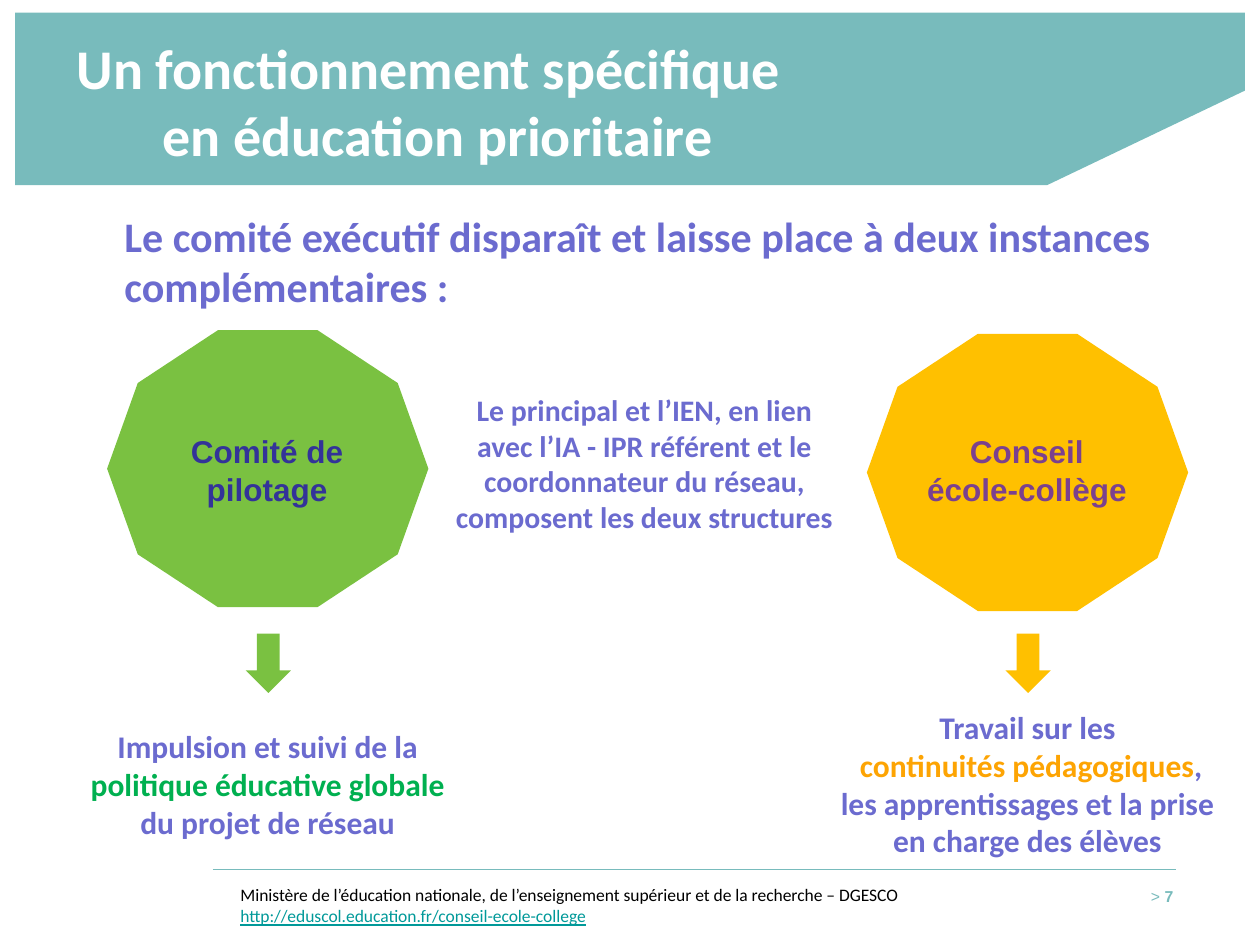
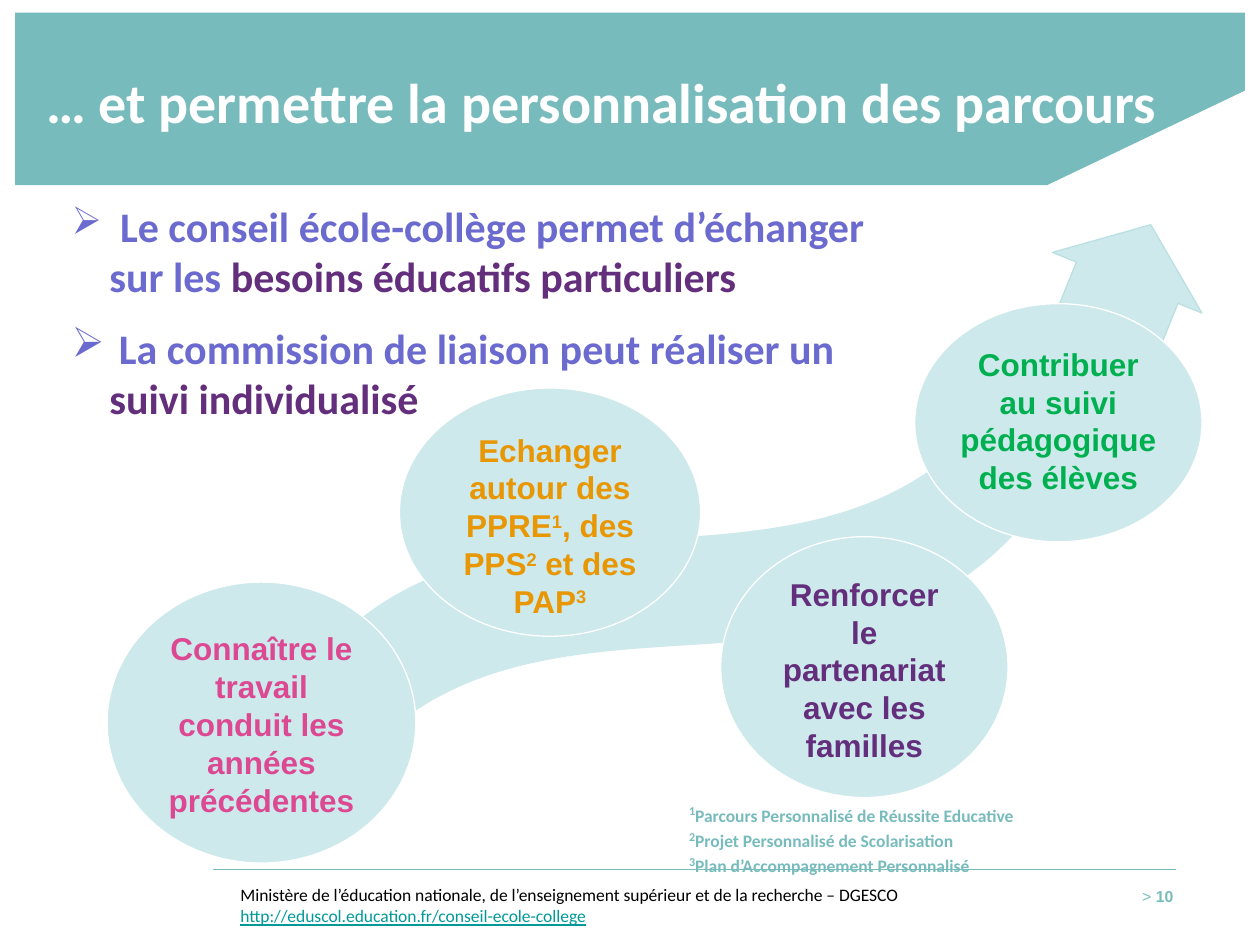
from lxml import etree
from pptx import Presentation
from pptx.dml.color import RGBColor
from pptx.enum.shapes import MSO_CONNECTOR, MSO_SHAPE
from pptx.enum.text import MSO_ANCHOR, PP_ALIGN
from pptx.oxml.ns import qn
from pptx.util import Inches, Pt

LEFT, CENTER, RIGHT = PP_ALIGN.LEFT, PP_ALIGN.CENTER, PP_ALIGN.RIGHT
TOP, MIDDLE = MSO_ANCHOR.TOP, MSO_ANCHOR.MIDDLE
DECAGON, DOWN_ARROW, ELLIPSE = MSO_SHAPE.DECAGON, MSO_SHAPE.DOWN_ARROW, MSO_SHAPE.OVAL
WAVE, RIGHT_ARROW = MSO_SHAPE.WAVE, MSO_SHAPE.RIGHT_ARROW
STRAIGHT = MSO_CONNECTOR.STRAIGHT

COLORS = {
    "teal": "78BBBC", "white": "FFFFFF", "black": "000000", "link": "009999",
    "lavender": "6B6BCF", "purple": "632E7C", "plum": "7B418E", "navy": "333399",
    "lime": "7AC141", "amber": "FFC000", "green": "00B050", "orange": "FDA403",
    "ochre": "E89602", "pink": "DC4892", "pale": "CDE9EB", "pale_edge": "BBE0E3",
}

BAND = [(9.88, 0.1), (0.12, 0.1), (0.12, 1.47), (8.31, 1.47), (9.88, 0.72)]
FOOTER = [
    "Ministère de l’éducation nationale, de l’enseignement supérieur et de la recherche – DGESCO",
    [("http://eduscol.education.fr/conseil-ecole-college", {"color": "link", "underline": True})],
]

BODIES = {
    "intro": "Le comité exécutif disparaît et laisse place à deux instances complémentaires :",
    "members": "Le principal et l’IEN, en lien avec l’IA - IPR référent et le coordonnateur du réseau, "
               "composent les deux structures",
}
INSTANCES = [
    {"left": 0.85, "top": 2.62, "fill": "lime", "color": "navy",
     "name": ["Comité de pilotage"], "role_box": (0.43, 5.72, 3.39, 1.01),
     "role": ["Impulsion et suivi de la ",
              ("politique éducative globale\n", {"color": "green"}),
              "du projet de réseau"]},
    {"left": 6.88, "top": 2.65, "fill": "amber", "color": "plum",
     "name": ["Conseil", "école-collège"], "role_box": (6.5, 5.57, 3.31, 1.31),
     "role": ["Travail sur les\n ",
              ("continuités pédagogiques", {"color": "orange"}),
              ", les apprentissages et la prise en charge des élèves"]},
]

EXCHANGES = [
    [(" ", {"size": 22, "font": "Arial"}),
     "Le conseil école-collège permet d’échanger sur les ",
     ("besoins éducatifs particuliers", {"color": "purple"})],
    [" La commission de liaison peut réaliser un ",
     ("suivi individualisé", {"color": "purple"})],
]
SUPERSCRIPT = {"raised": True}
STEPS = [
    {"box": (0.85, 4.62, 2.45, 2.23), "color": "pink", "insets": (0.1, 0.05, 0.1, 0.05),
     "text": ["Connaître le travail conduit les années précédentes"]},
    {"box": (7.26, 2.41, 2.28, 1.89), "color": "green", "insets": (0, 0.05, 0, 0.05),
     "text": ["Contribuer au suivi pédagogique", "des élèves"]},
    {"box": (5.72, 4.26, 2.28, 2.07), "color": "purple", "insets": (0.08, 0, 0.08, 0.04),
     "text": ["Renforcer le partenariat avec les familles"]},
    {"box": (3.17, 3.08, 2.39, 1.97), "color": "ochre", "insets": (0.1, 0.05, 0.1, 0.05),
     "text": [["Echanger autour des PPRE", ("1", SUPERSCRIPT), ", des PPS", ("2", SUPERSCRIPT),
               " et des PAP", ("3", SUPERSCRIPT)]]},
]
ACRONYMS = [
    "Parcours Personnalisé de Réussite Educative",
    "Projet Personnalisé de Scolarisation",
    "Plan d’Accompagnement Personnalisé",
]


def rgb(name):
    return RGBColor.from_string(COLORS[name])


def add_run(paragraph, text, font="Calibri", size=18, color="lavender", bold=True,
            underline=False, raised=False):
    for index, line in enumerate(text.split("\n")):
        if index:
            paragraph.add_line_break()
        if not line:
            continue
        run = paragraph.add_run()
        run.text = line
        run.font.name = font
        run.font.size = Pt(size)
        run.font.bold = bold
        run.font.color.rgb = rgb(color)
        if underline:
            run.font.underline = True
        if raised:
            run.font._element.set("baseline", "30000")


def write_text(shape, paragraphs, align=LEFT, anchor=TOP, insets=(0.1, 0.05, 0.1, 0.05),
               margin=0, indent=0, bullet=None, space_after=0, **run_format):
    frame = shape.text_frame
    frame.word_wrap = True
    frame.vertical_anchor = anchor
    frame.margin_left, frame.margin_top, frame.margin_right, frame.margin_bottom = map(Inches, insets)
    for index, parts in enumerate(paragraphs):
        paragraph = frame.paragraphs[0] if index == 0 else frame.add_paragraph()
        paragraph.alignment = align
        paragraph.space_after = Pt(space_after)
        properties = paragraph._p.get_or_add_pPr()
        if margin:
            properties.set("marL", str(Inches(margin)))
            properties.set("indent", str(Inches(indent)))
        if bullet:
            etree.SubElement(properties, qn("a:buChar")).set("char", bullet)
        for part in [parts] if isinstance(parts, str) else parts:
            text, changes = (part, {}) if isinstance(part, str) else part
            add_run(paragraph, text, **{**run_format, **changes})


def add_text(slide, box, paragraphs, **text_format):
    write_text(slide.shapes.add_textbox(*map(Inches, box)), paragraphs, **text_format)


def paint(shape, fill, line=None):
    shape.shadow.inherit = False
    shape.fill.solid()
    shape.fill.fore_color.rgb = rgb(fill)
    if line:
        shape.line.color.rgb = rgb(line)
        shape.line.width = Pt(0.75)
    else:
        shape.line.fill.background()


def add_shape(slide, kind, box, fill, line=None, rotation=0, adjustments=()):
    shape = slide.shapes.add_shape(kind, *map(Inches, box))
    paint(shape, fill, line)
    shape.rotation = rotation
    for index, value in enumerate(adjustments):
        shape.adjustments[index] = value
    return shape


def add_base(presentation):
    slide = presentation.slides.add_slide(presentation.slide_layouts[6])
    corners = [(Inches(x), Inches(y)) for x, y in BAND]
    builder = slide.shapes.build_freeform(*corners[0])
    builder.add_line_segments(corners[1:], close=True)
    paint(builder.convert_to_shape(), "teal")
    rule = slide.shapes.add_connector(STRAIGHT, *map(Inches, (1.69, 6.9, 9.33, 6.9)))
    rule.line.color.rgb = rgb("teal")
    rule.line.width = Pt(0.75)
    etree.SubElement(rule._element.spPr, qn("a:effectLst"))
    return slide


def add_title(slide, left, width, title):
    add_text(slide, (left, 0.13, width, 1.34), [title], anchor=MIDDLE, margin=0.68, indent=-0.68,
             size=32, color="white")


def add_footer(slide, number):
    add_text(slide, (8.39, 6.99, 1.02, 0.5), [["> ", (number, {"bold": True})]], align=RIGHT,
             font="Arial", size=9, color="teal", bold=False)
    add_text(slide, (1.81, 6.97, 6.66, 0.32), FOOTER, size=10, color="black", bold=False)


def build_instances(presentation):
    slide = add_base(presentation)
    add_title(slide, 0.51, 9.49, "Un fonctionnement spécifique\nen éducation prioritaire")
    add_text(slide, (0.51, 1.62, 8.83, 0.94), [BODIES["intro"]], margin=0.38, size=24)
    add_text(slide, (3.5, 3.06, 3.23, 1.24), [BODIES["members"]], align=CENTER, size=17)
    for instance in INSTANCES:
        left, fill = instance["left"], instance["fill"]
        add_shape(slide, DECAGON, (left, instance["top"], 2.55, 2.2), fill)
        add_text(slide, (left + 0.3, 3.38, 1.94, 0.71), instance["name"], align=CENTER,
                 font="Arial", color=instance["color"])
        add_shape(slide, DOWN_ARROW, (left + 1.1, 5.03, 0.36, 0.47), fill)
        add_text(slide, instance["role_box"], [instance["role"]], align=CENTER)
    add_footer(slide, "7")


def build_pathways(presentation):
    slide = add_base(presentation)
    add_shape(slide, WAVE, (2.59, 3.96, 5.46, 1.48), "pale", rotation=341.2, adjustments=(0.2, 0))
    add_shape(slide, RIGHT_ARROW, (8.5, 1.57, 0.92, 1.28), "pale", line="pale_edge",
              rotation=292.1, adjustments=(0.68, 0.54))
    add_title(slide, 0.27, 9.12, "… et permettre la personnalisation des parcours")
    add_text(slide, (0.47, 1.54, 6.9, 1.89), EXCHANGES, margin=0.3, indent=-0.3, bullet="➢",
             space_after=12, size=24)
    notes = [[(str(number), {"size": 12, "raised": True}), meaning]
             for number, meaning in enumerate(ACRONYMS, 1)]
    add_text(slide, (5.37, 6.31, 3.62, 0.6), notes, size=10, color="teal")
    for step in STEPS:
        bubble = add_shape(slide, ELLIPSE, step["box"], "pale", line="white")
        write_text(bubble, step["text"], align=CENTER, insets=step["insets"], font="Arial",
                   color=step["color"])
    add_footer(slide, "10")


def main():
    presentation = Presentation()
    presentation.slide_width = Inches(10)
    presentation.slide_height = Inches(7.5)
    build_instances(presentation)
    build_pathways(presentation)
    presentation.save("out.pptx")


if __name__ == "__main__":
    main()
